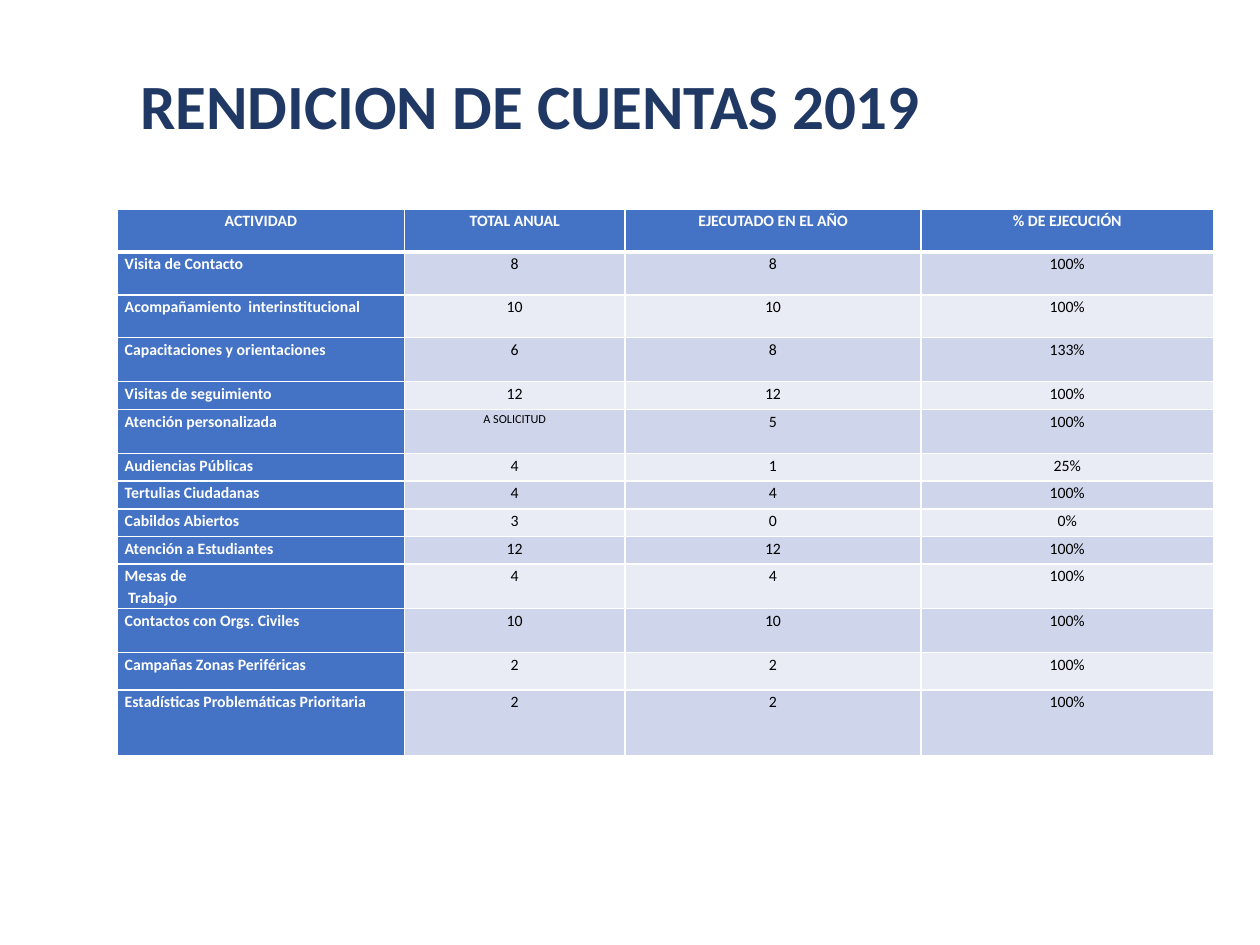
from pptx import Presentation
from pptx.dml.color import RGBColor
from pptx.enum.text import MSO_ANCHOR, PP_ALIGN
from pptx.oxml import parse_xml
from pptx.oxml.ns import nsdecls
from pptx.util import Inches, Pt

COLORS = {
    "title": "203864",
    "accent": "4472C4",
    "band_dark": "CFD5EA",
    "band_light": "E9EBF5",
    "white": "FFFFFF",
    "black": "000000",
}
FONT = "Calibri"
COLUMN_WIDTHS = [2.28, 1.75, 2.35, 2.32]

# Row height in inches, then the text of each cell
ROWS = [
    (0.34, "ACTIVIDAD", "TOTAL ANUAL", "EJECUTADO EN EL AÑO", "% DE EJECUCIÓN"),
    (0.34, "Visita de Contacto", "8", "8", "100%"),
    (0.34, "Acompañamiento  interinstitucional", "10", "10", "100%"),
    (0.35, "Capacitaciones y orientaciones", "6", "8", "133%"),
    (0.22, "Visitas de seguimiento", "12", "12", "100%"),
    (0.35, "Atención personalizada", "A SOLICITUD", "5", "100%"),
    (0.22, "Audiencias Públicas", "4", "1", "25%"),
    (0.22, "Tertulias Ciudadanas", "4", "4", "100%"),
    (0.22, "Cabildos Abiertos", "3", "0", "0%"),
    (0.22, "Atención a Estudiantes", "12", "12", "100%"),
    (0.35, "Mesas de\n Trabajo", "4", "4", "100%"),
    (0.35, "Contactos con Orgs. Civiles", "10", "10", "100%"),
    (0.3, "Campañas Zonas Periféricas", "2", "2", "100%"),
    (0.52, "Estadísticas Problemáticas Prioritaria", "2", "2", "100%"),
]


def style_font(paragraph, size, color, bold):
    font = paragraph.font
    font.name = FONT
    font.size = Pt(size)
    font.bold = bold
    font.color.rgb = RGBColor.from_string(COLORS[color])


def add_borders(cell, top, bottom):
    """Draw white cell borders; top and bottom are widths in points."""
    properties = cell._tc.get_or_add_tcPr()
    sides = {"lnL": 1, "lnR": 1, "lnT": top, "lnB": bottom}
    for position, (side, width) in enumerate(sides.items()):
        properties.insert(position, parse_xml(
            f'<a:{side} {nsdecls("a")} w="{Pt(width)}"><a:solidFill>'
            f'<a:srgbClr val="{COLORS["white"]}"/></a:solidFill></a:{side}>'))


deck = Presentation()
deck.slide_width, deck.slide_height = Inches(10), Inches(7.5)
page = deck.slides.add_slide(deck.slide_layouts[6])

title = page.shapes.add_textbox(Inches(0.69), Inches(0.57), Inches(7.04), Inches(0.59))
title.text_frame.word_wrap = True
title.text_frame.vertical_anchor = MSO_ANCHOR.MIDDLE
para = title.text_frame.paragraphs[0]
para.text = "RENDICION DE CUENTAS 2019"
para.alignment = PP_ALIGN.CENTER
para.line_spacing = 0.9
style_font(para, 36, "title", True)

table = page.shapes.add_table(
    len(ROWS), len(COLUMN_WIDTHS), Inches(0.93), Inches(1.66),
    Inches(sum(COLUMN_WIDTHS)), Inches(sum(row[0] for row in ROWS))).table
for column, width in zip(table.columns, COLUMN_WIDTHS):
    column.width = Inches(width)

for row_index, (height, *texts) in enumerate(ROWS):
    table.rows[row_index].height = Inches(height)
    is_header = row_index == 0
    band = "band_dark" if row_index % 2 else "band_light"
    for column_index, text in enumerate(texts):
        is_label = column_index == 0 and not is_header
        is_accent = is_header or is_label
        cell = table.cell(row_index, column_index)
        cell.margin_left = cell.margin_right = Inches(0.06)
        cell.margin_top = cell.margin_bottom = 0
        cell.fill.solid()
        cell.fill.fore_color.rgb = RGBColor.from_string(
            COLORS["accent" if is_accent else band])
        add_borders(cell, 3 if row_index == 1 else 1, 3 if is_header else 1)
        cell.text_frame.text = text
        for para in cell.text_frame.paragraphs:
            para.alignment = PP_ALIGN.LEFT if is_label else PP_ALIGN.CENTER
            para.line_spacing = 1.15
            style_font(para, 7 if text == "A SOLICITUD" else 9,
                       "white" if is_accent else "black", is_accent)

deck.save("out.pptx")
